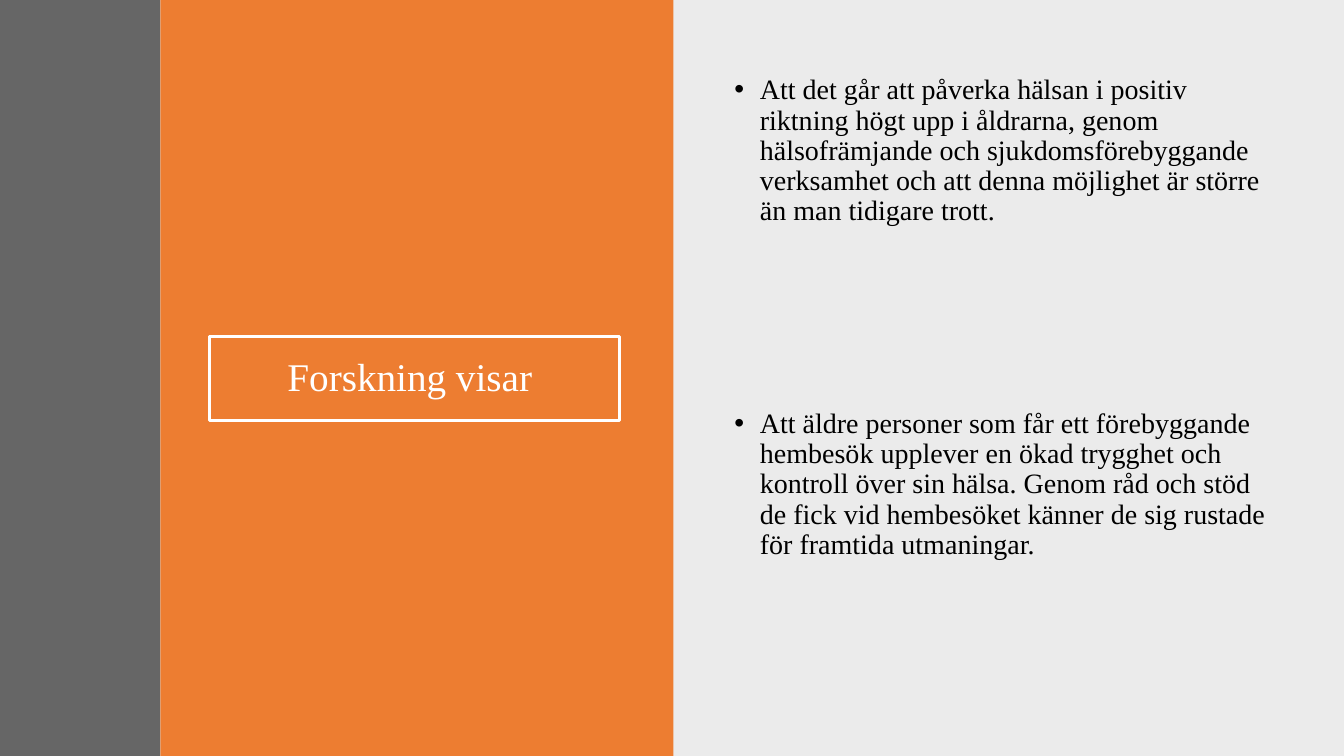
from lxml.etree import SubElement
from pptx import Presentation
from pptx.dml.color import RGBColor
from pptx.enum.shapes import MSO_SHAPE
from pptx.enum.text import MSO_ANCHOR, MSO_AUTO_SIZE, PP_ALIGN
from pptx.oxml.ns import qn
from pptx.util import Cm, Pt

FONT = "Times New Roman"
WIDTH, HEIGHT = 33.87, 19.05
FINDINGS = [
    "Att det går att påverka hälsan i positiv riktning högt upp i åldrarna, genom "
    "hälsofrämjande och sjukdomsförebyggande verksamhet och att denna möjlighet är "
    "större än man tidigare trott.",
    "Att äldre personer som får ett förebyggande hembesök upplever en ökad trygghet "
    "och kontroll över sin hälsa. Genom råd och stöd de fick vid hembesöket känner "
    "de sig rustade för framtida utmaningar.",
]


def rgb(value):
    return RGBColor.from_string(value)


def add_panel(s, left, width, color, alpha=100):
    sp = s.shapes.add_shape(MSO_SHAPE.RECTANGLE, Cm(left), 0, Cm(width), Cm(HEIGHT))
    sp.shadow.inherit = False
    sp.fill.solid()
    sp.fill.fore_color.rgb = rgb(color)
    sp.line.fill.background()
    if alpha < 100:
        clr = sp.element.spPr.find(qn("a:solidFill")).find(qn("a:srgbClr"))
        SubElement(clr, qn("a:alpha"), val=str(alpha * 1000))


def write_text(sp, text, size, color, align):
    tf = sp.text_frame
    tf.word_wrap = True
    tf.auto_size = MSO_AUTO_SIZE.NONE
    tf.text = text
    p = tf.paragraphs[0]
    p.alignment = align
    p.line_spacing = 0.9
    r = p.runs[0]
    r.font.name = FONT
    r.font.size = Pt(size)
    r.font.color.rgb = rgb(color)
    return p


def format_title(s, text):
    sp = s.shapes.title
    sp.left, sp.top, sp.width, sp.height = Cm(5.28), Cm(8.48), Cm(10.34), Cm(2.11)
    sp.line.color.rgb = rgb("FFFFFF")
    sp.line.width = Pt(2)
    write_text(sp, text, 28, "FFFFFF", PP_ALIGN.CENTER)
    sp.text_frame.vertical_anchor = MSO_ANCHOR.MIDDLE
    sp.element.getparent().append(sp.element)


def add_finding(s, top, text):
    sp = s.shapes.add_textbox(Cm(18.26), Cm(top), Cm(14.05), Cm(7.09))
    p = write_text(sp, text, 20, "000000", PP_ALIGN.LEFT)
    p.space_before = Pt(10)
    pPr = p._p.get_or_add_pPr()
    pPr.set("marL", str(Cm(0.64)))
    pPr.set("indent", str(-Cm(0.64)))
    SubElement(pPr, qn("a:buFont"), typeface="Arial")
    SubElement(pPr, qn("a:buChar"), char="•")


def main():
    prs = Presentation()
    prs.slide_width, prs.slide_height = Cm(WIDTH), Cm(HEIGHT)
    s = prs.slides.add_slide(prs.slide_layouts[5])
    add_panel(s, 16.94, WIDTH - 16.94, "000000", alpha=8)
    add_panel(s, 4.04, 12.93, "ED7D31")
    add_panel(s, 0, 4.04, "404040", alpha=80)
    format_title(s, "Forskning visar ")
    for i, text in enumerate(FINDINGS):
        add_finding(s, 1.78 + i * 8.41, text)
    prs.save("out.pptx")


if __name__ == "__main__":
    main()
